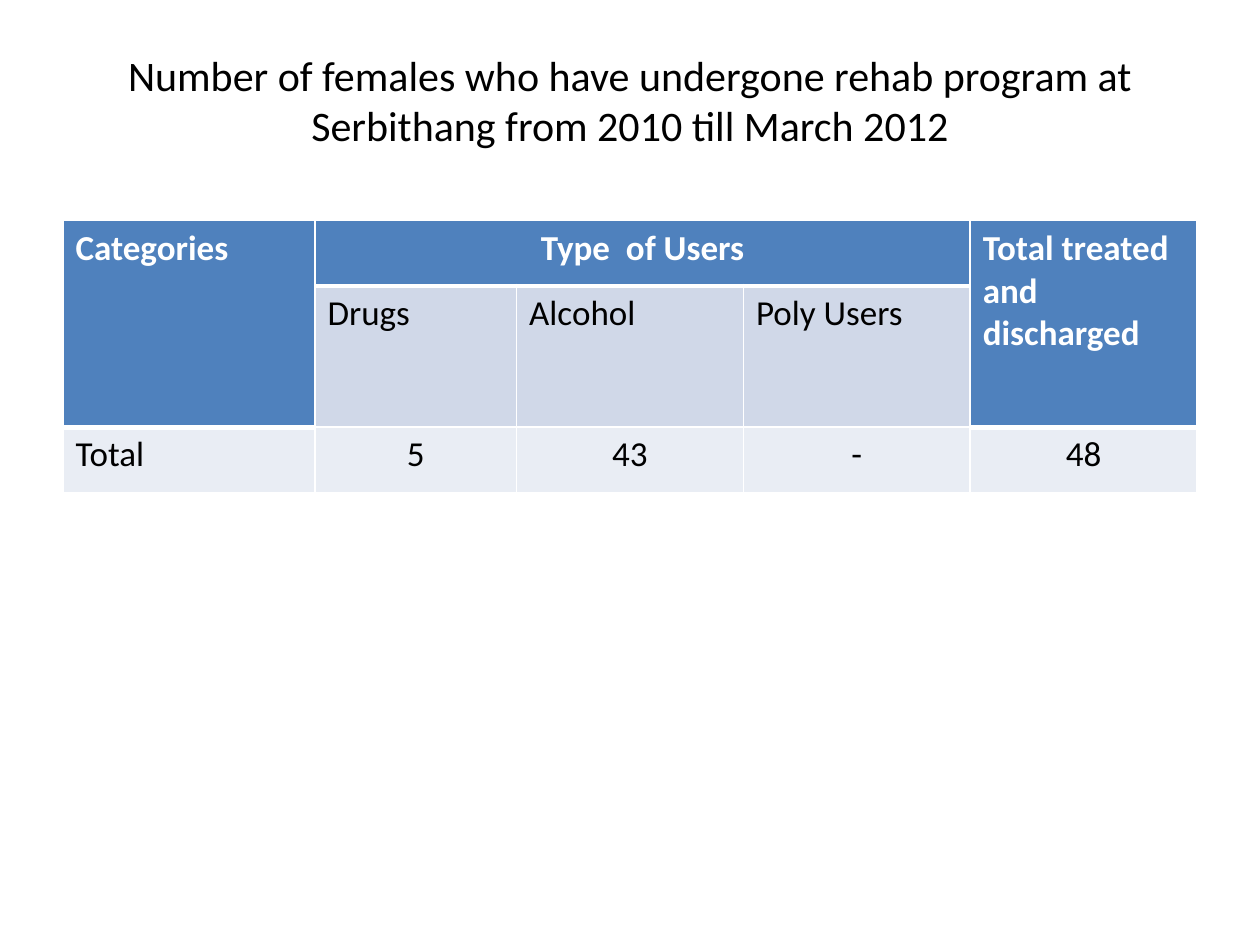
from lxml import etree
from pptx import Presentation
from pptx.dml.color import RGBColor
from pptx.enum.text import MSO_ANCHOR, PP_ALIGN
from pptx.oxml.ns import qn
from pptx.util import Inches, Pt

CENTER, LEFT = PP_ALIGN.CENTER, PP_ALIGN.LEFT
MIDDLE = MSO_ANCHOR.MIDDLE
HEADER, BAND, TOTAL_BAND = "4F81BD", "D0D8E8", "E9EDF4"
WHITE, BLACK = "FFFFFF", "000000"


def color(value):
    return RGBColor.from_string(value)


def add_borders(cell, bottom_width):
    """Draw white cell borders; they must precede the fill in the XML."""
    properties = cell._tc.get_or_add_tcPr()
    widths = {"a:lnL": 1, "a:lnR": 1, "a:lnT": 1, "a:lnB": bottom_width}
    for position, (side, width) in enumerate(widths.items()):
        line = etree.Element(qn(side), w=str(Pt(width)))
        fill = etree.SubElement(line, qn("a:solidFill"))
        etree.SubElement(fill, qn("a:srgbClr"), val=WHITE)
        properties.insert(position, line)


prs = Presentation()
prs.slide_width, prs.slide_height = Inches(10), Inches(7.5)
slide = prs.slides.add_slide(prs.slide_layouts[5])
margin = Inches(0.5)
content_width = prs.slide_width - 2 * margin

# Title, raised a little by a deeper bottom inset
title = slide.shapes.title
title.left, title.top = margin, Inches(0.3)
title.width, title.height = content_width, Inches(1.25)
heading = title.text_frame
heading.text = ("Number of females who have undergone rehab program at "
                "Serbithang from 2010 till March 2012")
heading.word_wrap = True
heading.vertical_anchor = MIDDLE
heading.margin_bottom = Inches(0.32)
heading.paragraphs[0].alignment = CENTER
heading_font = heading.paragraphs[0].runs[0].font
heading_font.name, heading_font.size = "Calibri", Pt(24)
heading_font.color.rgb = color(BLACK)

# Table grid
rows = [
    ["Categories", "Type  of Users", "", "", "Total treated and discharged"],
    ["", "Drugs", "Alcohol", "Poly Users", ""],
    ["Total", "5", "43", "-", "48"],
]
column_widths = [2, 1.6, 1.8, 1.8, 1.8]
row_heights = [0.52, 0.79, 0.52]
users = slide.shapes.add_table(
    len(rows), len(column_widths), margin, Inches(1.75),
    content_width, Inches(sum(row_heights))).table
for column, width in zip(users.columns, column_widths):
    column.width = Inches(width)
for row, height in zip(users.rows, row_heights):
    row.height = Inches(height)

# Headings that span rows or columns
users.cell(0, 0).merge(users.cell(1, 0))
users.cell(0, 1).merge(users.cell(0, 3))
users.cell(0, 4).merge(users.cell(1, 4))

# Cell text, fills and borders
for r, texts in enumerate(rows):
    for c, text in enumerate(texts):
        cell = users.cell(r, c)
        is_header = r == 0 or (r == 1 and c in (0, 4))
        is_centered = (r == 0 and c == 1) or (r == 2 and c > 0)
        cell.fill.solid()
        cell.fill.fore_color.rgb = color(
            HEADER if is_header else BAND if r == 1 else TOTAL_BAND)
        add_borders(cell, 3 if is_header else 1)
        if not text:
            continue
        cell.text_frame.text = text
        paragraph = cell.text_frame.paragraphs[0]
        paragraph.alignment = CENTER if is_centered else LEFT
        font = paragraph.runs[0].font
        font.name, font.size, font.bold = "Calibri", Pt(20), is_header
        font.color.rgb = color(WHITE if is_header else BLACK)

prs.save("out.pptx")
